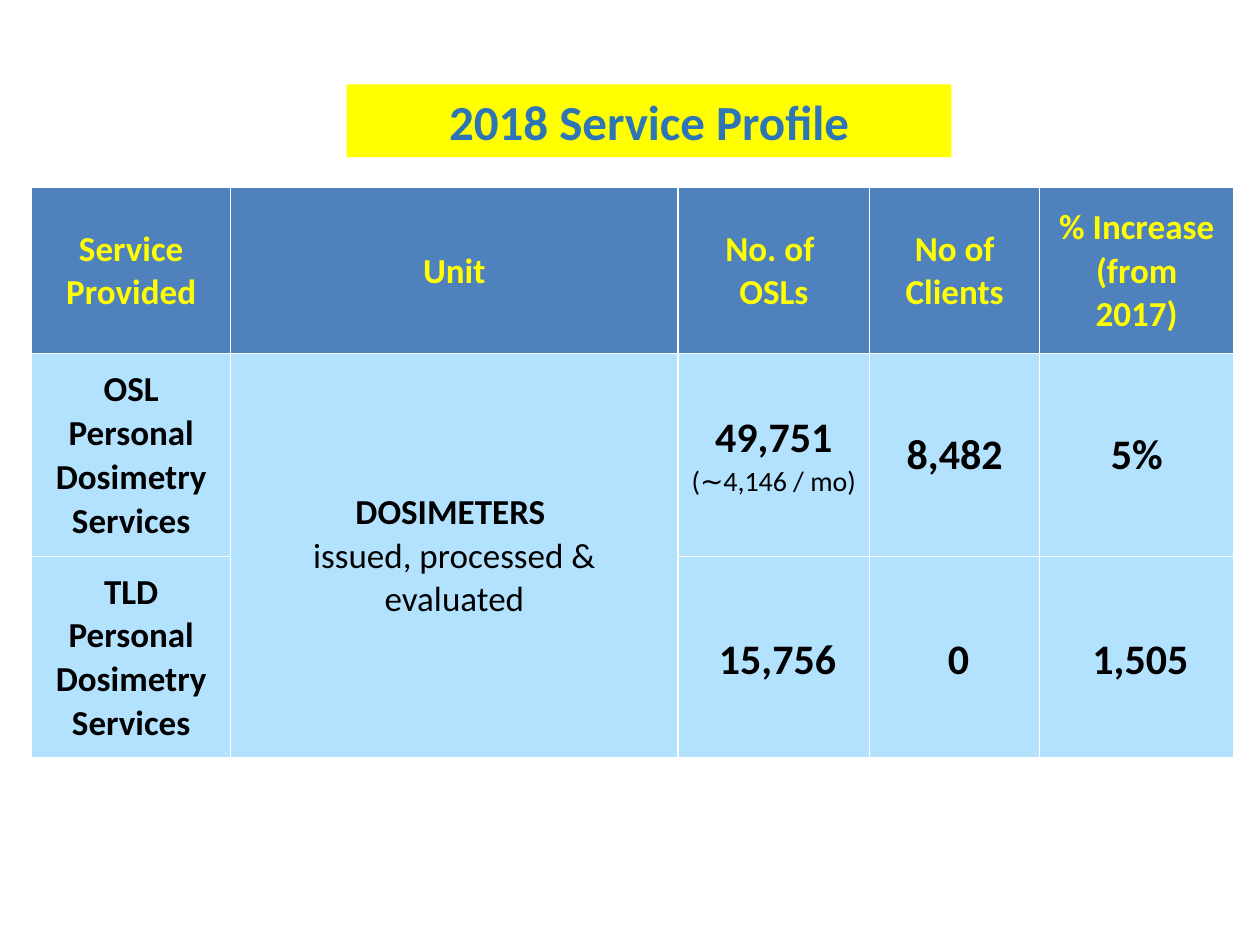
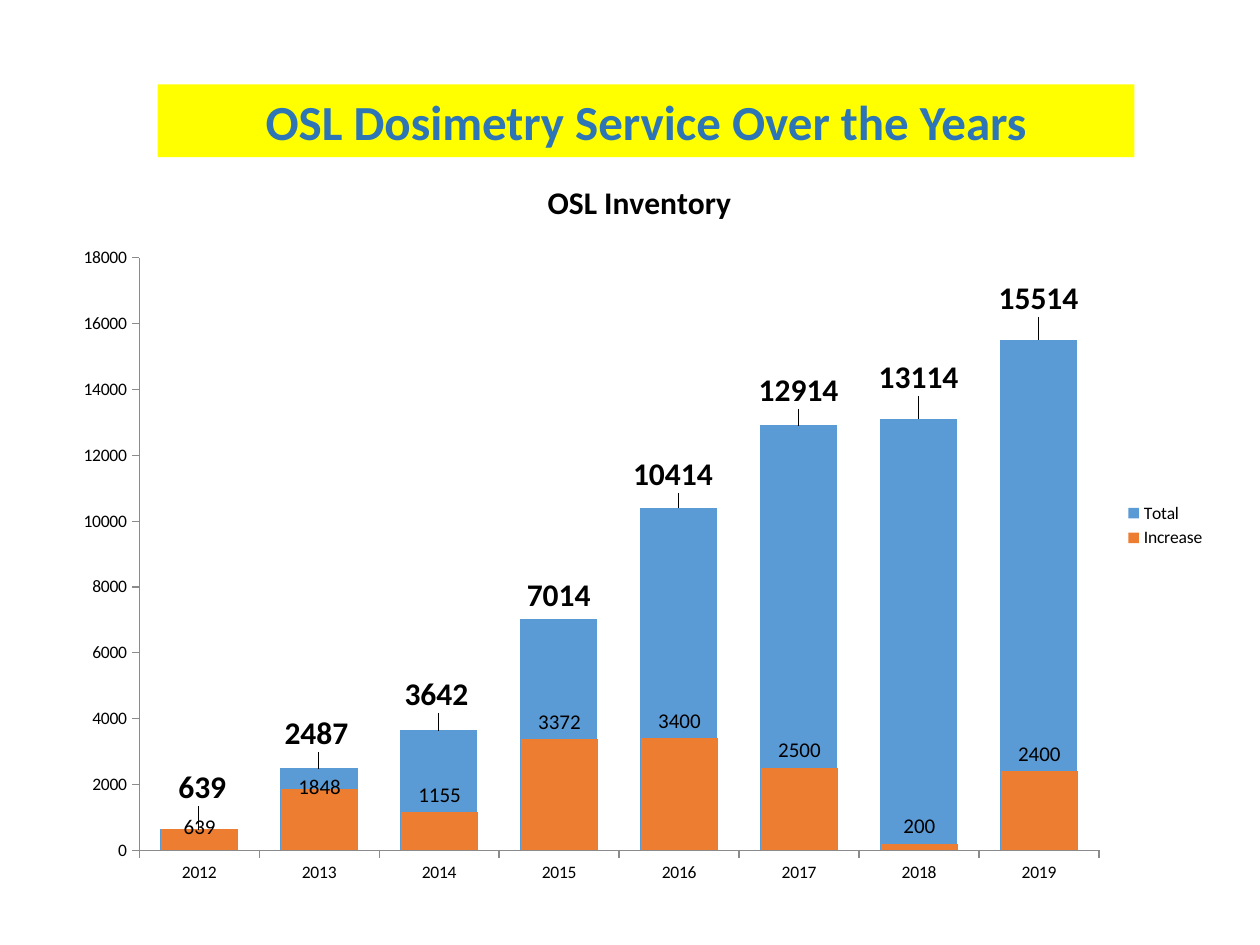
from dataclasses import dataclass

from lxml import etree
from pptx import Presentation
from pptx.chart.data import CategoryChartData
from pptx.dml.color import RGBColor
from pptx.enum.chart import XL_CHART_TYPE, XL_LABEL_POSITION, XL_LEGEND_POSITION, XL_TICK_MARK
from pptx.enum.shapes import MSO_SHAPE
from pptx.enum.text import MSO_ANCHOR, PP_ALIGN
from pptx.oxml import parse_xml
from pptx.oxml.ns import nsdecls, qn
from pptx.util import Cm, Pt

RECTANGLE = MSO_SHAPE.RECTANGLE
CENTER = PP_ALIGN.CENTER
MIDDLE = MSO_ANCHOR.MIDDLE
COLUMNS = XL_CHART_TYPE.COLUMN_CLUSTERED
OUTSIDE_END = XL_LABEL_POSITION.OUTSIDE_END
LEGEND_RIGHT = XL_LEGEND_POSITION.RIGHT
TICK_OUTSIDE = XL_TICK_MARK.OUTSIDE


@dataclass(frozen=True)
class Theme:
    font: str = "Calibri"
    band: str = "FFFF00"
    title: str = "2E75B6"
    header: str = "4F81BD"
    body: str = "B3E2FF"
    border: str = "FFFFFF"
    text: str = "000000"
    axis: str = "8B8B8B"
    total: str = "5B9BD5"
    increase: str = "ED7D31"
    title_size: int = 28
    figure_size: int = 24
    table_size: int = 20
    chart_title_size: int = 18
    note_size: int = 16
    increase_size: int = 12
    axis_size: int = 10


@dataclass(frozen=True)
class Box:
    """A region of the slide, in centimetres."""
    left: float
    top: float
    width: float
    height: float

    def lengths(self):
        return Cm(self.left), Cm(self.top), Cm(self.width), Cm(self.height)


THEME = Theme()
BAND_TOP, BAND_HEIGHT = 1.7, 1.47

COLUMN_WIDTHS = (4.01, 9.02, 3.86, 3.43, 3.91)
ROW_HEIGHTS = (3.35, 4.09, 4.06)
CELL_MARGINS = dict(margin_left=Cm(0.25), margin_right=Cm(0.25),
                    margin_top=Cm(0.13), margin_bottom=Cm(0.13))
TIGHT_MARGINS = dict(margin_left=Cm(0.18), margin_right=Cm(0.18),
                     margin_top=0, margin_bottom=0)

LABEL = dict(size=THEME.table_size, bold=True)
PLAIN = dict(size=THEME.table_size, bold=False)
FIGURE = dict(size=THEME.figure_size, bold=True)
NOTE = dict(size=THEME.note_size, bold=False)

# Each cell is a list of (line, format); None continues the cell above.
SERVICE_ROWS = (
    ([("Service Provided", LABEL)],
     [("Unit", LABEL)],
     [("No. of ", LABEL), ("OSLs", LABEL)],
     [("No of Clients", LABEL)],
     [("% Increase (from 2017)", LABEL)]),
    ([("OSL Personal Dosimetry Services", LABEL)],
     [("DOSIMETERS ", LABEL), ("issued, processed & evaluated", PLAIN)],
     [("49,751", FIGURE), ("(∼4,146 / mo)", NOTE)],
     [("8,482", FIGURE)],
     [("5%", FIGURE)]),
    ([("TLD Personal Dosimetry Services", LABEL)],
     None,
     [("15,756", FIGURE)],
     [("0", FIGURE)],
     [("1,505", FIGURE)]),
)

YEARS = [str(year) for year in range(2012, 2020)]
TOTALS = (639, 2487, 3642, 7014, 10414, 12914, 13114, 15514)
INCREASES = (639, 1848, 1155, 3372, 3400, 2500, 200, 2400)
# Label shifts from the bar end, by year, as shares of the chart's size.
TOTAL_SHIFTS = {"2012": (0.003, -0.024), "2013": (-0.002, -0.015), "2014": (-0.002, -0.016),
                "2016": (-0.005, -0.012), "2017": (0, -0.015), "2018": (0, -0.023),
                "2019": (0, -0.023)}
INCREASE_SHIFTS = {"2012": (0, 0.021), "2013": (0, 0.021)}


def apply(target, **values):
    for attribute, value in values.items():
        setattr(target, attribute, value)


def style_font(font, size, bold=False, color=THEME.text):
    apply(font, name=THEME.font, size=Pt(size), bold=bold)
    font.color.rgb = RGBColor.from_string(color)


def fill_solid(fill, color):
    fill.solid()
    fill.fore_color.rgb = RGBColor.from_string(color)


def add_title_band(slide, box, title):
    band = slide.shapes.add_shape(RECTANGLE, *box.lengths())
    band.shadow.inherit = False
    fill_solid(band.fill, THEME.band)
    band.line.fill.background()
    apply(band.text_frame, word_wrap=True, vertical_anchor=MIDDLE)
    paragraph = band.text_frame.paragraphs[0]
    apply(paragraph, text=title, alignment=CENTER)
    style_font(paragraph.runs[0].font, THEME.title_size, True, THEME.title)


def add_borders(cell):
    properties = cell._tc.get_or_add_tcPr()
    for position, side in enumerate(("lnL", "lnR", "lnT", "lnB")):
        properties.insert(position, parse_xml(
            f'<a:{side} {nsdecls("a")} w="11557"><a:solidFill>'
            f'<a:srgbClr val="{THEME.border}"/></a:solidFill></a:{side}>'))


def write_cell(cell, lines, color, tight):
    """Write the lines; a tight cell has thin margins and a small indent."""
    apply(cell, vertical_anchor=MIDDLE, **(TIGHT_MARGINS if tight else CELL_MARGINS))
    frame = cell.text_frame
    for number, (line, line_format) in enumerate(lines):
        paragraph = frame.add_paragraph() if number else frame.paragraphs[0]
        apply(paragraph, text=line, alignment=CENTER, line_spacing=1.12 if tight else 1.02)
        if tight:
            paragraph._p.get_or_add_pPr().set("marL", str(Cm(0.15)))
        style_font(paragraph.runs[0].font, color=color, **line_format)


def add_service_table(slide, box):
    table = slide.shapes.add_table(len(ROW_HEIGHTS), len(COLUMN_WIDTHS), *box.lengths()).table
    for column, width in zip(table.columns, COLUMN_WIDTHS):
        column.width = Cm(width)
    for row, height in zip(table.rows, ROW_HEIGHTS):
        row.height = Cm(height)
    table.cell(1, 1).merge(table.cell(2, 1))
    for row, cells in enumerate(SERVICE_ROWS):
        for column, lines in enumerate(cells):
            cell = table.cell(row, column)
            fill_solid(cell.fill, THEME.body if row else THEME.header)
            add_borders(cell)
            if lines:
                write_cell(cell, lines, THEME.text if row else THEME.band,
                           tight=row == 2 and column > 1)


def add_layout(parent, position, **values):
    """Insert a manual chart layout among the children of parent."""
    layout = etree.Element(qn("c:layout"))
    manual = etree.SubElement(layout, qn("c:manualLayout"))
    for tag, value in values.items():
        etree.SubElement(manual, qn(f"c:{tag}")).set("val", str(value))
    for old in parent.findall(qn("c:layout")):
        parent.remove(old)
    parent.insert(position, layout)


def style_series(series, color, size, bold, shifts):
    fill_solid(series.format.fill, color)
    series.invert_if_negative = False
    labels = series.data_labels
    apply(labels, show_value=True, position=OUTSIDE_END)
    style_font(labels.font, size, bold)
    for year, (x, y) in shifts.items():
        index = YEARS.index(year)
        label = series.points[index].data_label
        label.position = OUTSIDE_END
        style_font(label.font, size, bold)
        element = series._element.xpath(f"c:dLbls/c:dLbl[c:idx/@val='{index}']")[0]
        add_layout(element, 1, x=x, y=y)


def add_inventory_chart(slide, box):
    data = CategoryChartData()
    data.categories = YEARS
    data.add_series("Total", TOTALS)
    data.add_series("Increase", INCREASES)
    chart = slide.shapes.add_chart(COLUMNS, *box.lengths(), data).chart
    style_font(chart.font, THEME.axis_size)

    title = chart.chart_title.text_frame
    title.text = "OSL Inventory"
    style_font(title.paragraphs[0].runs[0].font, THEME.chart_title_size, True)
    apply(chart, has_legend=True)
    apply(chart.legend, position=LEGEND_RIGHT, include_in_layout=False)

    apply(chart.value_axis, minimum_scale=0, maximum_scale=18000, major_unit=2000)
    for axis in (chart.category_axis, chart.value_axis):
        apply(axis, has_major_gridlines=False, major_tick_mark=TICK_OUTSIDE)
        axis.format.line.color.rgb = RGBColor.from_string(THEME.axis)
        axis.format.line.width = Pt(0.75)

    plot = chart.plots[0]
    apply(plot, gap_width=54, overlap=99, vary_by_categories=False)
    total, increase = plot.series
    style_series(total, THEME.total, THEME.chart_title_size, True, TOTAL_SHIFTS)
    style_series(increase, THEME.increase, THEME.increase_size, False, INCREASE_SHIFTS)
    plot_area = chart._chartSpace.find(".//" + qn("c:plotArea"))
    add_layout(plot_area, 0, layoutTarget="inner", xMode="edge", yMode="edge",
               x=0.068, y=0.14, w=0.829, h=0.797)


def build_service_profile(slide):
    add_title_band(slide, Box(6.99, BAND_TOP, 12.19, BAND_HEIGHT), "2018 Service Profile")
    add_service_table(slide, Box(0.64, 3.78, sum(COLUMN_WIDTHS), sum(ROW_HEIGHTS)))


def build_inventory(slide):
    add_title_band(slide, Box(3.18, BAND_TOP, 19.69, BAND_HEIGHT),
                   "OSL Dosimetry Service Over the Years")
    add_inventory_chart(slide, Box(1.22, 3.1, 23.34, 14.99))


def main():
    deck = Presentation()
    apply(deck, slide_width=Cm(25.4), slide_height=Cm(19.05))
    blank = deck.slide_layouts[6]
    for build in (build_service_profile, build_inventory):
        build(deck.slides.add_slide(blank))
    deck.save("out.pptx")


if __name__ == "__main__":
    main()
